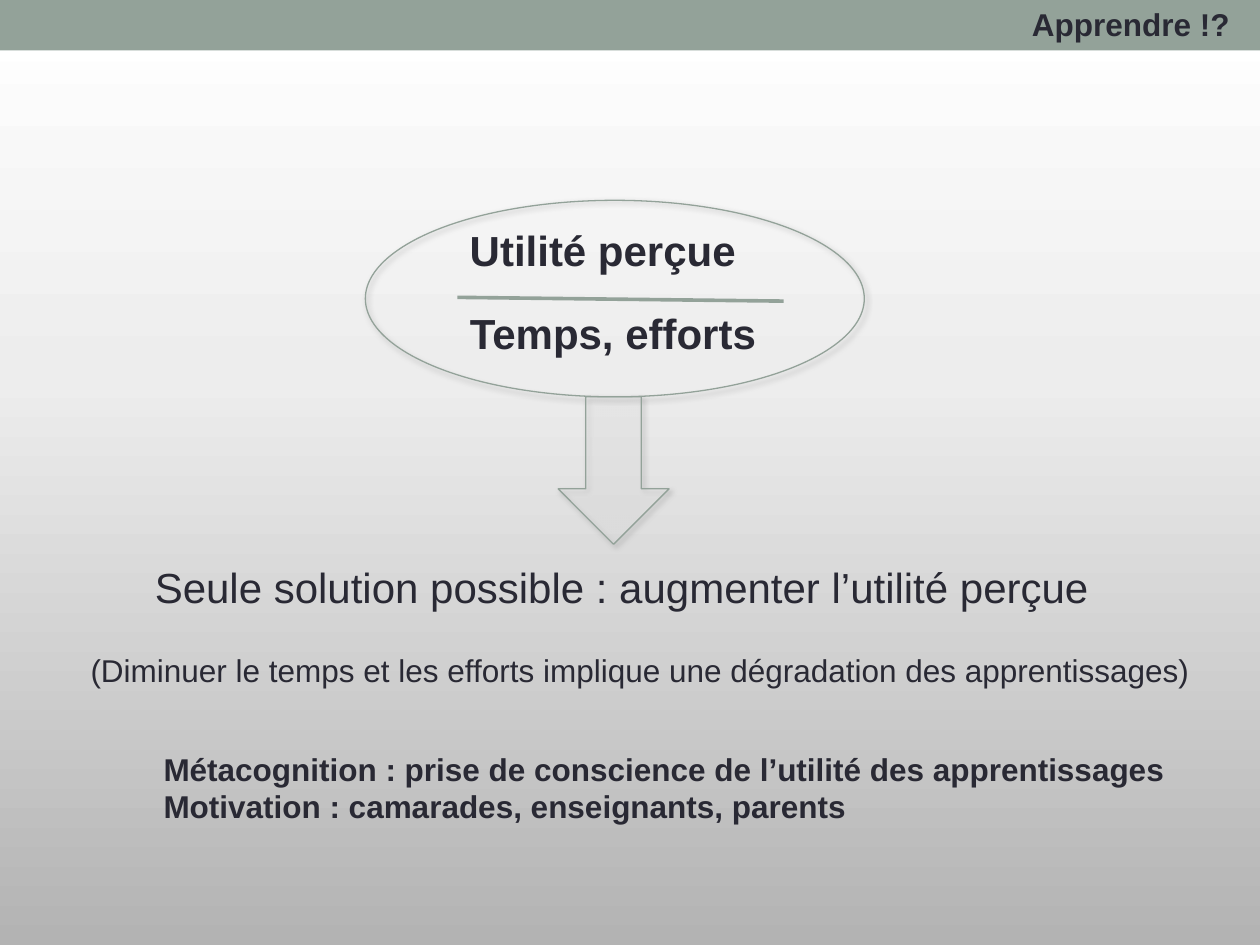
from copy import deepcopy
from dataclasses import dataclass

from lxml import etree
from pptx import Presentation
from pptx.dml.color import RGBColor
from pptx.enum.shapes import MSO_CONNECTOR, MSO_SHAPE
from pptx.enum.text import MSO_ANCHOR, MSO_AUTO_SIZE, PP_ALIGN
from pptx.oxml.ns import qn
from pptx.util import Inches, Pt

RECT, OVAL, DOWN = MSO_SHAPE.RECTANGLE, MSO_SHAPE.OVAL, MSO_SHAPE.DOWN_ARROW
STRAIGHT = MSO_CONNECTOR.STRAIGHT
TOP, LEFT = MSO_ANCHOR.TOP, PP_ALIGN.LEFT
FIT, NO_FIT = MSO_AUTO_SIZE.SHAPE_TO_FIT_TEXT, MSO_AUTO_SIZE.NONE
TITLE_ONLY = 5


@dataclass(frozen=True)
class Theme:
    font: str = "Arial"
    ink: str = "292934"
    sage: str = "93A299"
    white: str = "FFFFFF"
    shadow: str = "808080"
    background: tuple = ((0, "FFFFFF"), (0.4, "EDEDED"), (1, "B3B3B3"))
    large: int = 24
    small: int = 18


def rgb(value):
    return RGBColor.from_string(value)


class SlideBuilder:
    def __init__(self, prs, theme):
        self.theme = theme
        self.s = prs.slides.add_slide(prs.slide_layouts[TITLE_ONLY])

    def background(self):
        fill = self.s.background.fill
        fill.gradient()
        fill.gradient_angle = 270
        # The default gradient has two stops; a third is needed
        last = self.s.element.find(".//" + qn("a:gsLst"))[-1]
        last.addnext(deepcopy(last))
        for stop, (position, color) in zip(fill.gradient_stops, self.theme.background):
            stop.position = position
            stop.color.rgb = rgb(color)

    def bar(self, top, height, color):
        sp = self.s.shapes.add_shape(RECT, 0, Inches(top), Inches(10), Inches(height))
        sp.shadow.inherit = False
        sp.fill.solid()
        sp.fill.fore_color.rgb = rgb(color)
        sp.line.fill.background()

    def outline(self, kind, x, y, w, h, opacity=0):
        """Thin outlined shape with a soft shadow and an optional veil of white."""
        sp = self.s.shapes.add_shape(kind, Inches(x), Inches(y), Inches(w), Inches(h))
        sp.line.color.rgb = rgb(self.theme.sage)
        sp.line.width = Pt(0.75)
        if opacity:
            sp.fill.solid()
            sp.fill.fore_color.rgb = rgb(self.theme.white)
            color = sp.element.spPr.find(qn("a:solidFill"))[0]
            etree.SubElement(color, qn("a:alpha"), val=str(opacity * 1000))
        else:
            sp.fill.background()
        self.soft_shadow(sp)
        return sp

    def soft_shadow(self, sp):
        sp.shadow.inherit = False
        effects = sp.element.spPr.find(qn("a:effectLst"))
        outer = etree.SubElement(effects, qn("a:outerShdw"), blurRad=str(Pt(3)),
                                 dist=str(Pt(2)), dir=str(45 * 60000))
        color = etree.SubElement(outer, qn("a:srgbClr"), val=self.theme.shadow)
        etree.SubElement(color, qn("a:alpha"), val="60000")

    def line(self, x1, y1, x2, y2):
        sp = self.s.shapes.add_connector(
            STRAIGHT, Inches(x1), Inches(y1), Inches(x2), Inches(y2))
        sp.line.color.rgb = rgb(self.theme.sage)
        sp.line.width = Pt(2.08)
        etree.SubElement(sp.element.spPr, qn("a:effectLst"))
        return sp

    def add_lines(self, tf, lines, size, bold):
        tf.word_wrap = False
        tf.vertical_anchor = TOP
        for i, line in enumerate(lines):
            p = tf.add_paragraph() if i else tf.paragraphs[0]
            p.alignment = LEFT
            r = p.add_run()
            r.text = line
            r.font.name = self.theme.font
            r.font.size = Pt(size)
            r.font.bold = bold
            r.font.color.rgb = rgb(self.theme.ink)

    def text(self, x, y, w, h, lines, size, bold=False):
        sp = self.s.shapes.add_textbox(Inches(x), Inches(y), Inches(w), Inches(h))
        self.add_lines(sp.text_frame, lines, size, bold)
        sp.text_frame.auto_size = FIT
        return sp

    def title(self, x, y, w, h, line):
        sp = self.s.shapes.title
        sp.left, sp.top, sp.width, sp.height = map(Inches, (x, y, w, h))
        self.add_lines(sp.text_frame, [line], self.theme.small, True)
        sp.text_frame.auto_size = NO_FIT
        # Bring the title in front of the header bar
        sp.element.getparent().append(sp.element)

    def group(self, *parts):
        self.s.shapes.add_group_shape(parts)


def main():
    prs = Presentation()
    prs.slide_width, prs.slide_height = Inches(10), Inches(7.5)
    theme = Theme()
    b = SlideBuilder(prs, theme)

    # Background and header
    b.background()
    b.bar(0.24, 0.25, theme.white)
    b.bar(0, 0.4, theme.sage)

    # Ratio of perceived usefulness to effort
    b.group(
        b.text(3.63, 1.73, 2.33, 0.5, ["Utilité perçue"], theme.large, True),
        b.line(3.63, 2.36, 6.22, 2.39),
        b.text(3.63, 2.39, 2.59, 0.5, ["Temps, efforts"], theme.large, True),
    )

    # Conclusion
    b.text(1.13, 4.41, 7.69, 0.51,
           ["Seule solution possible : augmenter l’utilité perçue"], theme.large)
    b.text(0.62, 5.12, 9.01, 0.4,
           ["(Diminuer le temps et les efforts implique une dégradation des apprentissages)"],
           theme.small)

    # Ellipse, arrow and the levers they lead to
    b.group(
        b.outline(OVAL, 2.9, 1.59, 3.96, 1.56),
        b.outline(DOWN, 4.43, 3.15, 0.88, 1.17, opacity=17),
        b.text(1.2, 5.9, 8.23, 0.71,
               ["Métacognition : prise de conscience de l’utilité des apprentissages",
                "Motivation : camarades, enseignants, parents"], theme.small, True),
    )

    b.title(8.09, -0.01, 1.79, 0.4, "Apprendre !?")
    prs.save("out.pptx")


if __name__ == "__main__":
    main()
